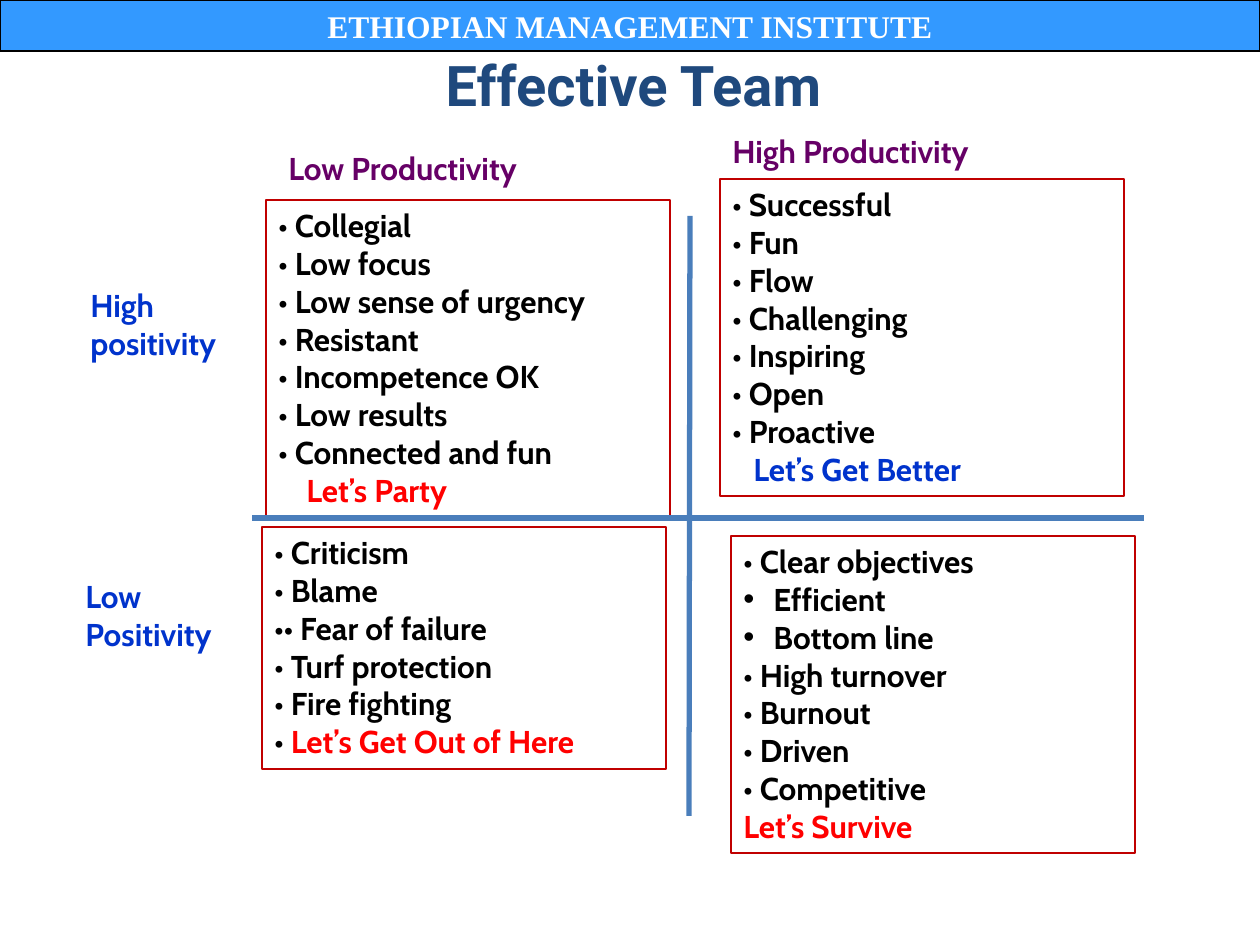
from lxml import etree
from pptx import Presentation
from pptx.dml.color import RGBColor
from pptx.enum.shapes import MSO_CONNECTOR, MSO_SHAPE
from pptx.enum.text import MSO_ANCHOR, PP_ALIGN
from pptx.oxml.ns import qn
from pptx.util import Emu, Pt

RECTANGLE = MSO_SHAPE.RECTANGLE
STRAIGHT = MSO_CONNECTOR.STRAIGHT
LEFT, CENTER = PP_ALIGN.LEFT, PP_ALIGN.CENTER
TOP, MIDDLE = MSO_ANCHOR.TOP, MSO_ANCHOR.MIDDLE

EMU_PER_PX = 914400 / 126
COLORS = {
    "banner": "3399FF", "white": "FFFFFF", "black": "000000",
    "title": "1F497D", "frame": "C00000", "axis": "4A7EBB",
    "red": "FF0000", "blue": "0033CC", "purple": "660066",
}
BODY_FONT = "Cabin"
BULLET = "•"
HANGING = 30
BOX_WIDTH = 404


def px(length):
    return Emu(round(length * EMU_PER_PX))


def color(name):
    return RGBColor.from_string(COLORS[name])


def dotted(*items):
    """Lines whose dot is part of the text."""
    return [{"runs": [(f"{BULLET} {item}", "black")]} for item in items]


def hanging(*items):
    """Lines with a paragraph bullet and a hanging indent."""
    return [{"runs": [(item, "black")], "bullet": True} for item in items]


def slogan(text, tone, indent=0):
    return [{"runs": [(text, tone)], "indent": indent}]


class SlideBuilder:
    def __init__(self, slide, font=BODY_FONT, size=18):
        self.shapes = slide.shapes
        self.font = font
        self.size = size

    def add_lines(self, frame, lines, font=None, size=None, align=LEFT, anchor=TOP):
        frame.word_wrap = True
        frame.vertical_anchor = anchor
        for number, line in enumerate(lines):
            paragraph = frame.paragraphs[0] if number == 0 else frame.add_paragraph()
            paragraph.alignment = align
            self.indent(paragraph, line)
            for text, tone in line["runs"]:
                run = paragraph.add_run()
                run.text = text
                run.font.name = font or self.font
                run.font.size = Pt(size or self.size)
                run.font.bold = True
                run.font.color.rgb = color(tone)

    def indent(self, paragraph, line):
        properties = paragraph._p.get_or_add_pPr()
        if line.get("bullet"):
            properties.set("marL", str(px(HANGING)))
            properties.set("indent", str(-px(HANGING)))
            etree.SubElement(properties, qn("a:buFont"), typeface="Arial")
            etree.SubElement(properties, qn("a:buChar"), char=BULLET)
        elif line.get("indent"):
            properties.set("marL", str(px(line["indent"])))

    def box(self, area, lines, line_color, fill=None, **style):
        shape = self.shapes.add_shape(RECTANGLE, *map(px, area))
        shape.shadow.inherit = False
        if fill:
            shape.fill.solid()
            shape.fill.fore_color.rgb = color(fill)
        else:
            shape.fill.background()
        shape.line.color.rgb = color(line_color)
        shape.line.width = Pt(0.75)
        self.add_lines(shape.text_frame, lines, **style)

    def label(self, area, text, tone, **style):
        textbox = self.shapes.add_textbox(*map(px, area))
        self.add_lines(textbox.text_frame, [{"runs": [(text, tone)]}], **style)

    def axis(self, start, end):
        line = self.shapes.add_connector(STRAIGHT, *map(px, start + end))
        line.line.color.rgb = color("axis")
        line.line.width = Pt(3)
        etree.SubElement(line._element.spPr, qn("a:effectLst"))


QUADRANTS = [
    ((266, 200, BOX_WIDTH, 317),
     dotted("Collegial", "Low focus", "Low sense of urgency", "Resistant",
            "Incompetence OK", "Low results", "Connected and fun")
     + slogan("Let’s Party", "red", 28)),
    ((720, 179, BOX_WIDTH, 317),
     dotted("Successful", "Fun", "Flow", "Challenging", "Inspiring", "Open",
            "Proactive")
     + slogan("Let’s Get Better", "blue", 21)),
    ((262, 527, BOX_WIDTH, 242),
     dotted("Criticism", "Blame")
     + [{"runs": [("•• Fear of failure", "black")]}]
     + dotted("Turf protection", "Fire fighting")
     + [{"runs": [("• ", "black"), ("Let’s Get Out of Here", "red")]}]),
    ((731, 536, BOX_WIDTH, 317),
     dotted("Clear objectives")
     + hanging("Efficient", "Bottom line")
     + dotted("High turnover", "Burnout", "Driven", "Competitive")
     + slogan("Let’s Survive", "red")),
]

LABELS = [
    ((78, 280, 204, 79), "High positivity", "blue"),
    ((73, 571, 191, 79), "Low Positivity", "blue"),
    ((720, 126, 354, 46), "High Productivity", "purple"),
    ((276, 143, 354, 46), "Low Productivity", "purple"),
]


def main():
    presentation = Presentation()
    presentation.slide_width, presentation.slide_height = px(1260), px(945)
    blank = presentation.slide_layouts[6]
    builder = SlideBuilder(presentation.slides.add_slide(blank))

    banner = [{"runs": [("ETHIOPIAN MANAGEMENT INSTITUTE", "white")]}]
    builder.box((0, 0, 1260, 51), banner, "black", fill="banner",
                font="Times New Roman", align=CENTER, anchor=MIDDLE)
    builder.label((84, 42, 1113, 84), "Effective Team ", "title",
                  font="Roboto", size=32, align=CENTER, anchor=MIDDLE)

    for area, lines in QUADRANTS:
        builder.box(area, lines, "frame")
    builder.axis((252, 518), (1144, 518))
    builder.axis((690, 216), (689, 816))
    for area, text, tone in LABELS:
        builder.label(area, text, tone)

    presentation.save("out.pptx")


if __name__ == "__main__":
    main()
